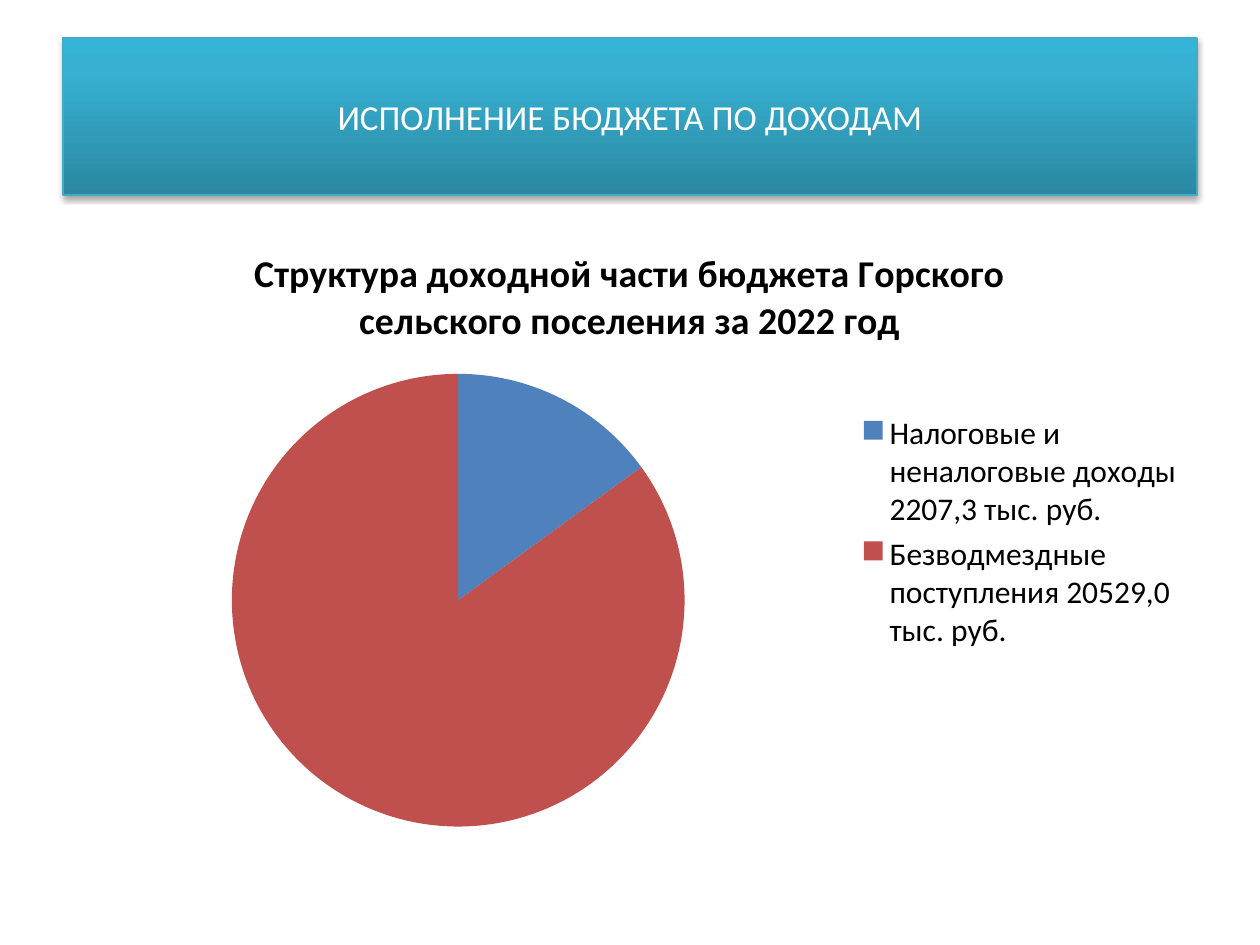
from lxml.etree import SubElement
from pptx import Presentation
from pptx.chart.data import CategoryChartData
from pptx.dml.color import RGBColor
from pptx.enum.chart import XL_CHART_TYPE, XL_LEGEND_POSITION
from pptx.enum.shapes import MSO_SHAPE
from pptx.enum.text import MSO_ANCHOR, PP_ALIGN
from pptx.oxml import parse_xml
from pptx.oxml.ns import nsdecls, qn
from pptx.util import Emu, Pt

COLORS = {
    "text": "000000",
    "white": "FFFFFF",
    "banner_line": "46AAC5",
    "banner_bottom": "2A88A2",
    "banner_middle": "37B1D2",
    "banner_top": "34B4D6",
    "tax": "4F81BD",
    "transfers": "C0504D",
}


class SlideBuilder:
    """Holds the style and the current slide and draws its elements."""

    FONT = "Calibri"
    EMU_PER_PX = 914400 / 126

    def __init__(self, width, height):
        self.deck = Presentation()
        self.deck.slide_width, self.deck.slide_height = self.px(width, height)
        self.slide = self.deck.slides.add_slide(self.deck.slide_layouts[6])

    def px(self, *lengths):
        return [Emu(round(length * self.EMU_PER_PX)) for length in lengths]

    def style(self, font, size, color, bold=False):
        font.name, font.size, font.bold = self.FONT, Pt(size), bold
        font.color.rgb = RGBColor.from_string(COLORS[color])

    def banner(self, text, box, stops, size):
        banner = self.slide.shapes.add_shape(MSO_SHAPE.RECTANGLE, *self.px(*box))
        banner.shadow.inherit = False
        banner.fill.gradient()
        banner.fill.gradient_angle = 90
        stop_list = banner._element.spPr.find(qn("a:gradFill")).find(qn("a:gsLst"))
        for stop in list(stop_list):
            stop_list.remove(stop)
        for position, color in stops:
            stop = SubElement(stop_list, qn("a:gs"), pos=str(position * 1000))
            SubElement(stop, qn("a:srgbClr"), val=COLORS[color])
        banner.line.color.rgb = RGBColor.from_string(COLORS["banner_line"])
        banner.line.width = Pt(0.75)
        banner._element.spPr.find(qn("a:effectLst")).append(parse_xml(
            f'<a:outerShdw {nsdecls("a")} blurRad="40000" dist="23000" '
            'dir="5400000" rotWithShape="0"><a:srgbClr val="000000">'
            '<a:alpha val="35000"/></a:srgbClr></a:outerShdw>'))
        frame = banner.text_frame
        frame.word_wrap = True
        frame.vertical_anchor = MSO_ANCHOR.MIDDLE
        paragraph = frame.paragraphs[0]
        paragraph.alignment = PP_ALIGN.CENTER
        run = paragraph.add_run()
        run.text = text
        self.style(run.font, size, "white")

    def pie(self, title, box, shares, size, title_size):
        data = CategoryChartData()
        data.categories = [name for name, _, _ in shares]
        data.add_series("Series 1", [value for _, value, _ in shares])
        chart = self.slide.shapes.add_chart(
            XL_CHART_TYPE.PIE, *self.px(*box), data).chart
        self.style(chart.font, size, "text")
        chart.has_title = True
        run = chart.chart_title.text_frame.paragraphs[0].add_run()
        run.text = title
        self.style(run.font, title_size, "text", bold=True)
        chart.chart_title.include_in_layout = False
        chart.has_legend = True
        chart.legend.position = XL_LEGEND_POSITION.RIGHT
        chart.legend.include_in_layout = False
        self.style(chart.legend.font, size, "text")
        plot = chart.plots[0]
        plot.vary_by_categories = True
        for index, (_, _, color) in enumerate(shares):
            fill = plot.series[0].points[index].format.fill
            fill.solid()
            fill.fore_color.rgb = RGBColor.from_string(COLORS[color])

    def save(self):
        self.deck.save("out.pptx")


def main():
    builder = SlideBuilder(1260, 945)
    builder.banner(
        "ИСПОЛНЕНИЕ БЮДЖЕТА ПО ДОХОДАМ",
        (63, 38, 1134, 157),
        [(0, "banner_bottom"), (80, "banner_middle"), (100, "banner_top")],
        size=20,
    )
    builder.pie(
        "Структура доходной части бюджета Горского сельского поселения за 2022 год",
        (63, 220, 1134, 624),
        [
            ("Налоговые и неналоговые доходы 2207,3 тыс. руб.", 15, "tax"),
            ("Безводмездные поступления 20529,0 тыс. руб.", 85, "transfers"),
        ],
        size=18,
        title_size=21.6,
    )
    builder.save()


if __name__ == "__main__":
    main()
